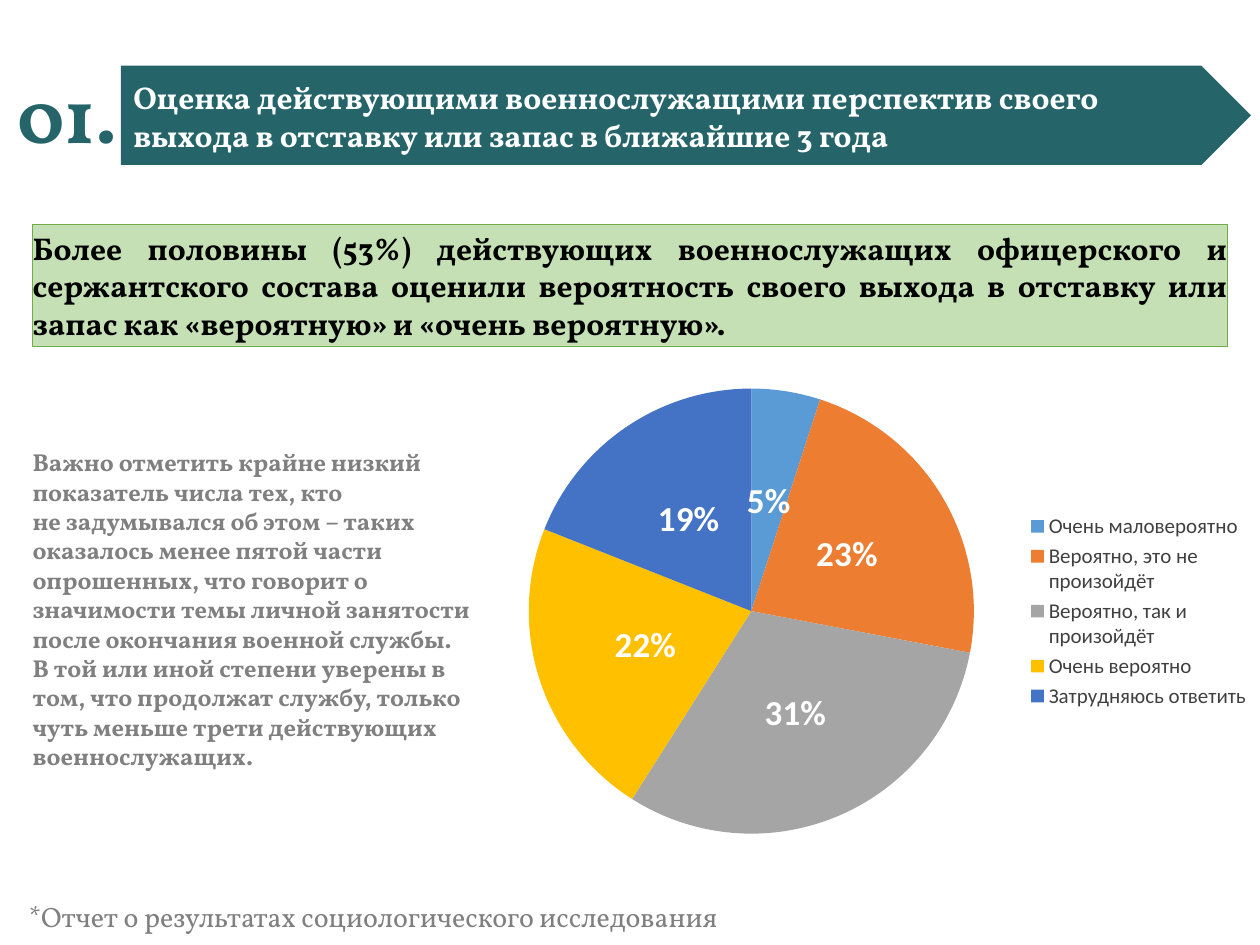
import dataclasses

import lxml.etree
import pptx
import pptx.chart.data
import pptx.dml.color
import pptx.enum.chart
import pptx.enum.shapes
import pptx.enum.text
import pptx.oxml.ns
import pptx.util

Pt = pptx.util.Pt


@dataclasses.dataclass(frozen=True)
class Theme:
    teal: str = "256569"
    white: str = "FFFFFF"
    black: str = "000000"
    grey: str = "808080"
    legend: str = "404040"
    pale_green: str = "C5E0B4"
    green: str = "70AD47"
    slices: tuple = ("5B9BD5", "ED7D31", "A5A5A5", "FFC000", "4472C4")
    text_font: str = "Vollkorn"
    chart_font: str = "Calibri"
    number_size: int = 44
    percent_size: int = 20
    heading_size: int = 18
    footnote_size: int = 16
    body_size: int = 14
    legend_size: int = 12
    chart_size: int = 10


THEME = Theme()


def color(value):
    return pptx.dml.color.RGBColor.from_string(value)


def style_font(font, name, size, value, bold=False):
    font.name = name
    font.size = Pt(size)
    font.color.rgb = color(value)
    font.bold = bold


def write_lines(paragraph, lines, size, value, bold=True):
    """Add one run per line, with line breaks between them."""
    for index, line in enumerate(lines):
        if index:
            paragraph.add_line_break()
        run = paragraph.add_run()
        run.text = line
        style_font(run.font, THEME.text_font, size, value, bold)


def add_text(slide, box, lines, size, value, bold=True):
    shape = slide.shapes.add_textbox(*map(Pt, box))
    shape.text_frame.word_wrap = True
    write_lines(shape.text_frame.paragraphs[0], lines, size, value, bold)


def add_block(slide, kind, box, fill, line=None):
    shape = slide.shapes.add_shape(kind, *map(Pt, box))
    shape.shadow.inherit = False
    shape.fill.solid()
    shape.fill.fore_color.rgb = color(fill)
    if line:
        shape.line.color.rgb = color(line)
        shape.line.width = Pt(0.5)
    else:
        shape.line.fill.background()
    return shape


def add_header(slide, box, number, title):
    """Section number on the left, title on an arrow-shaped banner."""
    left, top, width, height = box
    banner_left = left + 66.2
    add_block(slide, pptx.enum.shapes.MSO_SHAPE.PENTAGON,
              (banner_left, top + 3, width - 66.2, height - 5.2), THEME.teal)
    add_text(slide, (banner_left, top + 6.6, width - 80, 51), [title],
             THEME.heading_size, THEME.white)
    add_text(slide, (left, top, 87, height), [number],
             THEME.number_size, THEME.teal)


def add_key_finding(slide, box, text):
    shape = add_block(slide, pptx.enum.shapes.MSO_SHAPE.RECTANGLE, box,
                      THEME.pale_green, THEME.green)
    frame = shape.text_frame
    frame.word_wrap = True
    frame.vertical_anchor = pptx.enum.text.MSO_ANCHOR.MIDDLE
    frame.margin_left = frame.margin_right = 0
    frame.margin_top = frame.margin_bottom = 0
    paragraph = frame.paragraphs[0]
    paragraph.alignment = pptx.enum.text.PP_ALIGN.JUSTIFY
    paragraph.space_before = Pt(10)
    write_lines(paragraph, [text], THEME.heading_size, THEME.black)


def set_plot_layout(chart, x, y, width, height):
    """Place the inner plot area, in fractions of the chart."""
    qn = pptx.oxml.ns.qn
    plot_area = chart._chartSpace.chart.plotArea
    for old_layout in plot_area.findall(qn("c:layout")):
        plot_area.remove(old_layout)
    layout = lxml.etree.Element(qn("c:layout"))
    manual = lxml.etree.SubElement(layout, qn("c:manualLayout"))
    settings = (("layoutTarget", "inner"), ("xMode", "edge"), ("yMode", "edge"),
                ("x", x), ("y", y), ("w", width), ("h", height))
    for tag, value in settings:
        lxml.etree.SubElement(manual, qn("c:" + tag)).set("val", str(value))
    plot_area.insert(0, layout)


def add_answer_pie(slide, box, answers):
    data = pptx.chart.data.CategoryChartData()
    data.categories = list(answers)
    data.add_series("Series 1", list(answers.values()))
    chart = slide.shapes.add_chart(pptx.enum.chart.XL_CHART_TYPE.PIE,
                                   *map(Pt, box), data).chart
    chart.has_title = False
    style_font(chart.font, THEME.chart_font, THEME.chart_size, THEME.black)
    set_plot_layout(chart, 0.05, 0.04, 0.58, 0.92)

    chart.has_legend = True
    chart.legend.position = pptx.enum.chart.XL_LEGEND_POSITION.RIGHT
    chart.legend.include_in_layout = False
    style_font(chart.legend.font, THEME.chart_font, THEME.legend_size, THEME.legend)

    plot = chart.plots[0]
    plot.vary_by_categories = True
    series = plot.series[0]
    for index, value in enumerate(THEME.slices):
        fill = series.points[index].format.fill
        fill.solid()
        fill.fore_color.rgb = color(value)
    labels = series.data_labels
    labels.show_percentage = True
    labels.show_value = False
    labels.number_format = "0%"
    labels.number_format_is_linked = False
    labels.position = pptx.enum.chart.XL_LABEL_POSITION.CENTER
    style_font(labels.font, THEME.chart_font, THEME.percent_size, THEME.white, True)


def main():
    presentation = pptx.Presentation()
    presentation.slide_width = Pt(720)
    presentation.slide_height = Pt(540)
    slide = presentation.slides.add_slide(presentation.slide_layouts[6])

    add_header(slide, (2.9, 34.5, 712, 62), "01.",
               "Оценка действующими военнослужащими перспектив своего "
               "выхода в отставку или запас в ближайшие 3 года")
    add_text(slide, (11.5, 252, 267, 194), [
        "Важно отметить крайне низкий показатель числа тех, кто ",
        "не задумывался об этом – таких оказалось менее пятой части "
        "опрошенных, что говорит о значимости темы личной занятости "
        "после окончания военной службы. ",
        "В той или иной степени уверены в том, что продолжат службу, "
        "только чуть меньше трети действующих военнослужащих.",
    ], THEME.body_size, THEME.grey)
    add_text(slide, (9.4, 510.5, 553.7, 22.3),
             ["*Отчет о результатах социологического исследования"],
             THEME.footnote_size, THEME.grey, bold=False)
    add_key_finding(slide, (18.7, 128.2, 682.6, 69.8),
                    "Более половины (53%) действующих военнослужащих "
                    "офицерского и сержантского состава оценили вероятность "
                    "своего выхода в отставку или запас как «вероятную» "
                    "и «очень вероятную». ")
    add_answer_pie(slide, (278.6, 211, 443.5, 276.5), {
        "Очень маловероятно": 5,
        "Вероятно, это не произойдёт": 23,
        "Вероятно, так и произойдёт": 31,
        "Очень вероятно": 22,
        "Затрудняюсь ответить": 19,
    })
    presentation.save("out.pptx")


if __name__ == "__main__":
    main()
